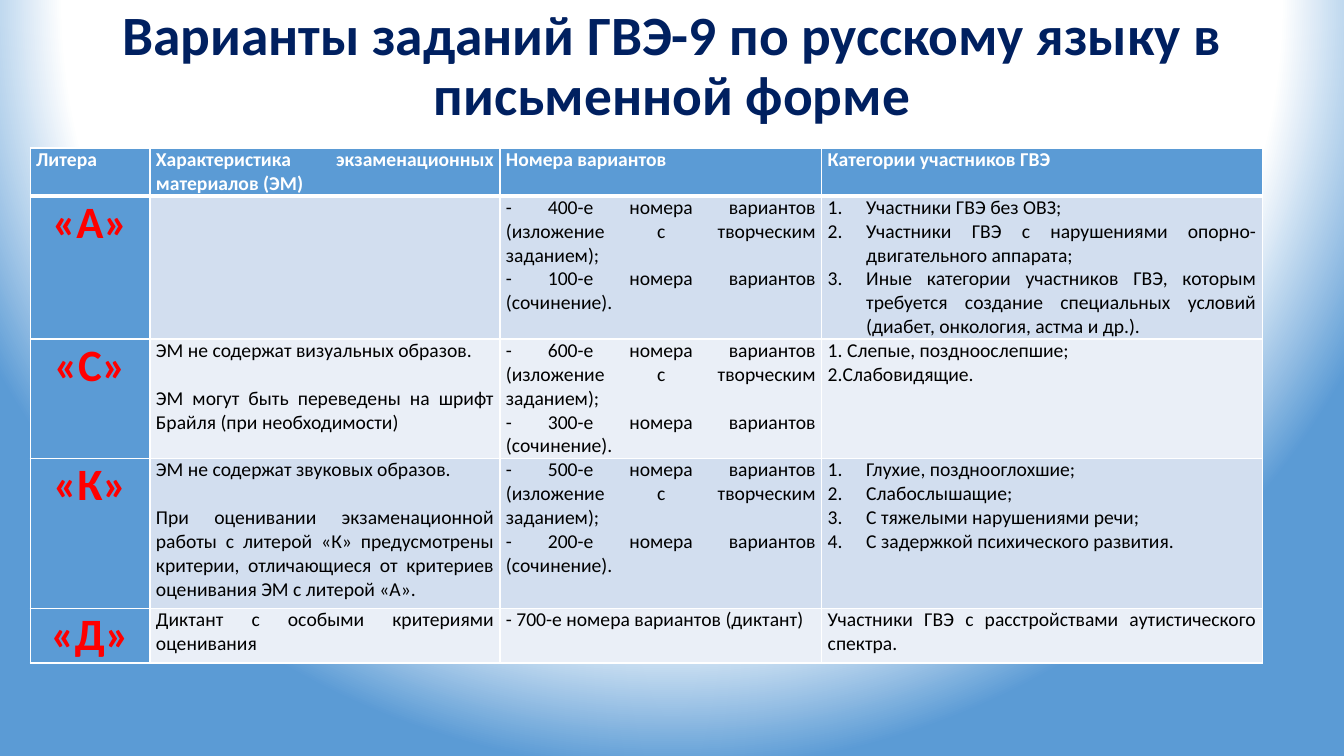
from lxml import etree
from pptx import Presentation
from pptx.dml.color import RGBColor
from pptx.enum import text
from pptx.oxml import ns, parse_xml
from pptx.util import Cm, Pt

NAVY = RGBColor(0x00, 0x20, 0x60)
BLUE = RGBColor(0x5B, 0x9B, 0xD5)
BAND_DARK = RGBColor(0xD2, 0xDE, 0xEF)
BAND_LIGHT = RGBColor(0xEA, 0xEF, 0xF7)
WHITE = RGBColor(0xFF, 0xFF, 0xFF)
BLACK = RGBColor(0x00, 0x00, 0x00)
RED = RGBColor(0xFF, 0x00, 0x00)

CENTER, JUSTIFY = text.PP_ALIGN.CENTER, text.PP_ALIGN.JUSTIFY
TITLE_FONT = {"name": "Calibri", "size": Pt(39.6), "bold": True}
HEADER_FONT = {"name": "Calibri", "size": Pt(14), "bold": True}
LETTER_FONT = {"name": "Calibri", "size": Pt(32), "bold": True}
BODY_FONT = {"name": "Calibri", "size": Pt(14), "bold": False}

COL_WIDTHS = [Cm(3.02), Cm(8.82), Cm(8.11), Cm(11.1)]
ROW_HEIGHTS = [Cm(1.14), Cm(3.4), Cm(2.64), Cm(3.78), Cm(1.14)]
LIST_INDENT = Cm(0.97)

TITLE = "Варианты заданий ГВЭ-9 по русскому языку в письменной форме"
HEADERS = ["Литера", "Характеристика экзаменационных материалов (ЭМ)",
           "Номера вариантов", "Категории участников ГВЭ"]


def essay_variants(retelling, essay):
    return [f"- {retelling}-е номера вариантов (изложение с творческим заданием);",
            f"- {essay}-е номера вариантов (сочинение)."]


# letter, materials, variant numbers, participants, participants are a numbered list
ROWS = [
    ("«А»", [], essay_variants(400, 100),
     ["Участники ГВЭ без ОВЗ;",
      "Участники ГВЭ с нарушениями опорно-двигательного аппарата;",
      "Иные категории участников ГВЭ, которым требуется создание специальных "
      "условий (диабет, онкология, астма и др.)."], True),
    ("«С»", ["ЭМ не содержат визуальных образов.",
             "ЭМ могут быть переведены на шрифт Брайля (при необходимости)"],
     essay_variants(600, 300),
     ["1. Слепые, поздноослепшие;", "2.Слабовидящие."], False),
    ("«К»", ["ЭМ не содержат звуковых образов.",
             "При оценивании экзаменационной работы с литерой «К» предусмотрены "
             "критерии, отличающиеся от критериев оценивания ЭМ с литерой «А»."],
     essay_variants(500, 200),
     ["Глухие, позднооглохшие;", "Слабослышащие;",
      "С тяжелыми нарушениями речи;", "С задержкой психического развития."], True),
    ("«Д»", ["Диктант с особыми критериями оценивания"],
     ["- 700-е номера вариантов (диктант)"],
     ["Участники ГВЭ с расстройствами аутистического спектра."], False),
]


def apply(obj, values):
    for name, value in values.items():
        setattr(obj, name, value)


def set_background(slide):
    """Radial gradient centred above the slide."""
    slide.background.fill.solid()
    bg_pr = slide.background._cSld.bg.bgPr
    stops = "".join(f'<a:gs pos="{pos}"><a:srgbClr val="{color}"/></a:gs>'
                    for pos, color in [(0, WHITE), (79000, WHITE), (100000, BLUE)])
    bg_pr.replace(bg_pr[0], parse_xml(
        f'<a:gradFill {ns.nsdecls("a")} rotWithShape="1"><a:gsLst>{stops}</a:gsLst>'
        '<a:path path="circle"><a:fillToRect l="50000" t="-80000" r="50000" b="180000"/>'
        '</a:path></a:gradFill>'))


def write_paragraph(p, words, font, color, align):
    p.alignment = align
    r = p.add_run()
    r.text = words
    apply(r.font, font)
    r.font.color.rgb = color


def add_title(slide):
    sp = slide.shapes.title
    apply(sp, {"left": Cm(2.33), "top": Cm(1.25), "width": Cm(29.21), "height": Cm(2.57)})
    tf = sp.text_frame
    apply(tf, {"word_wrap": True, "auto_size": text.MSO_AUTO_SIZE.NONE,
               "vertical_anchor": text.MSO_ANCHOR.MIDDLE, "margin_bottom": Cm(1.8)})
    p = tf.paragraphs[0]
    p.line_spacing = 0.9
    write_paragraph(p, TITLE, TITLE_FONT, NAVY, CENTER)


def set_borders(cell, bottom):
    tc_pr = cell._tc.get_or_add_tcPr()
    widths = {"lnL": 1, "lnR": 1, "lnT": 1, "lnB": bottom}
    for i, (side, width) in enumerate(widths.items()):
        ln = etree.Element(ns.qn(f"a:{side}"), w=str(Pt(width)))
        fill = etree.SubElement(ln, ns.qn("a:solidFill"))
        etree.SubElement(fill, ns.qn("a:srgbClr"), val=str(WHITE))
        tc_pr.insert(i, ln)


def fill_cell(cell, lines, fill, font, color, align=JUSTIFY, bottom=1):
    apply(cell, {"margin_left": Cm(0.15), "margin_right": Cm(0.15),
                 "margin_top": 0, "margin_bottom": 0})
    cell.fill.solid()
    cell.fill.fore_color.rgb = fill
    set_borders(cell, bottom)
    tf = cell.text_frame
    for i, line in enumerate(lines):
        p = tf.add_paragraph() if i else tf.paragraphs[0]
        write_paragraph(p, line, font, color, align)


def number_list(tf):
    for p in tf.paragraphs:
        p_pr = p._p.get_or_add_pPr()
        p_pr.set("marL", str(LIST_INDENT))
        p_pr.set("indent", str(-LIST_INDENT))
        etree.SubElement(p_pr, ns.qn("a:buFont"), typeface="+mj-lt")
        etree.SubElement(p_pr, ns.qn("a:buAutoNum"), type="arabicPeriod")


def add_variants_table(slide):
    table = slide.shapes.add_table(len(ROW_HEIGHTS), len(COL_WIDTHS), Cm(0.76), Cm(3.73),
                                   sum(COL_WIDTHS), sum(ROW_HEIGHTS)).table
    for column, width in zip(table.columns, COL_WIDTHS):
        column.width = width
    for row, height in zip(table.rows, ROW_HEIGHTS):
        row.height = height
    for c, header in enumerate(HEADERS):
        fill_cell(table.cell(0, c), [header], BLUE, HEADER_FONT, WHITE, bottom=3)
    for r, (letter, materials, variants, participants, numbered) in enumerate(ROWS, 1):
        fill_cell(table.cell(r, 0), [letter], BLUE, LETTER_FONT, RED, CENTER)
        band = BAND_DARK if r % 2 else BAND_LIGHT
        for c, lines in enumerate([materials, variants, participants], 1):
            fill_cell(table.cell(r, c), lines, band, BODY_FONT, BLACK)
        for p in table.cell(r, 1).text_frame.paragraphs[1:]:
            p.space_before = Pt(17)
        if numbered:
            number_list(table.cell(r, 3).text_frame)


def main():
    prs = Presentation()
    prs.slide_width, prs.slide_height = Cm(33.87), Cm(19.05)
    slide = prs.slides.add_slide(prs.slide_layouts[5])
    set_background(slide)
    add_title(slide)
    add_variants_table(slide)
    prs.save("out.pptx")


if __name__ == "__main__":
    main()
